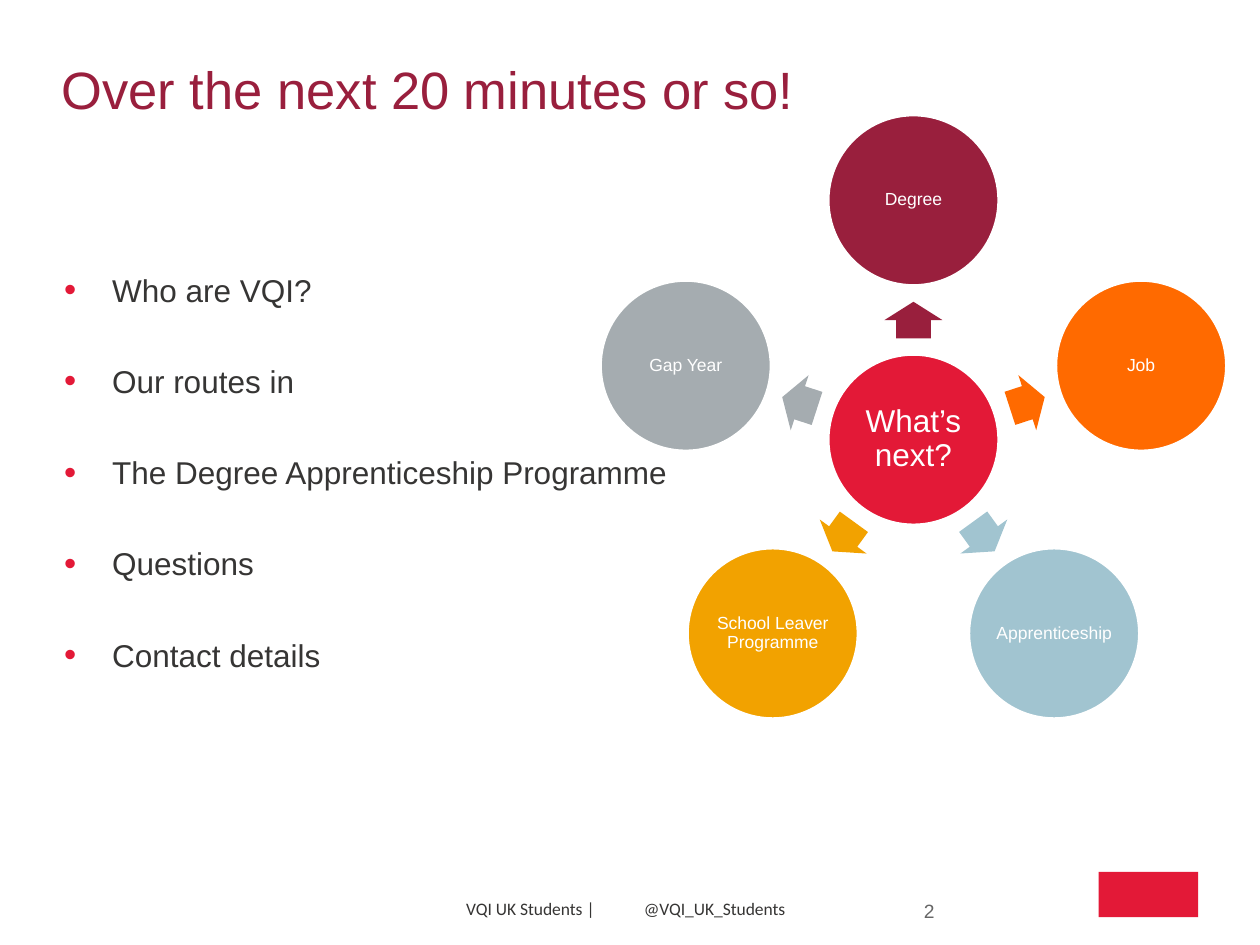
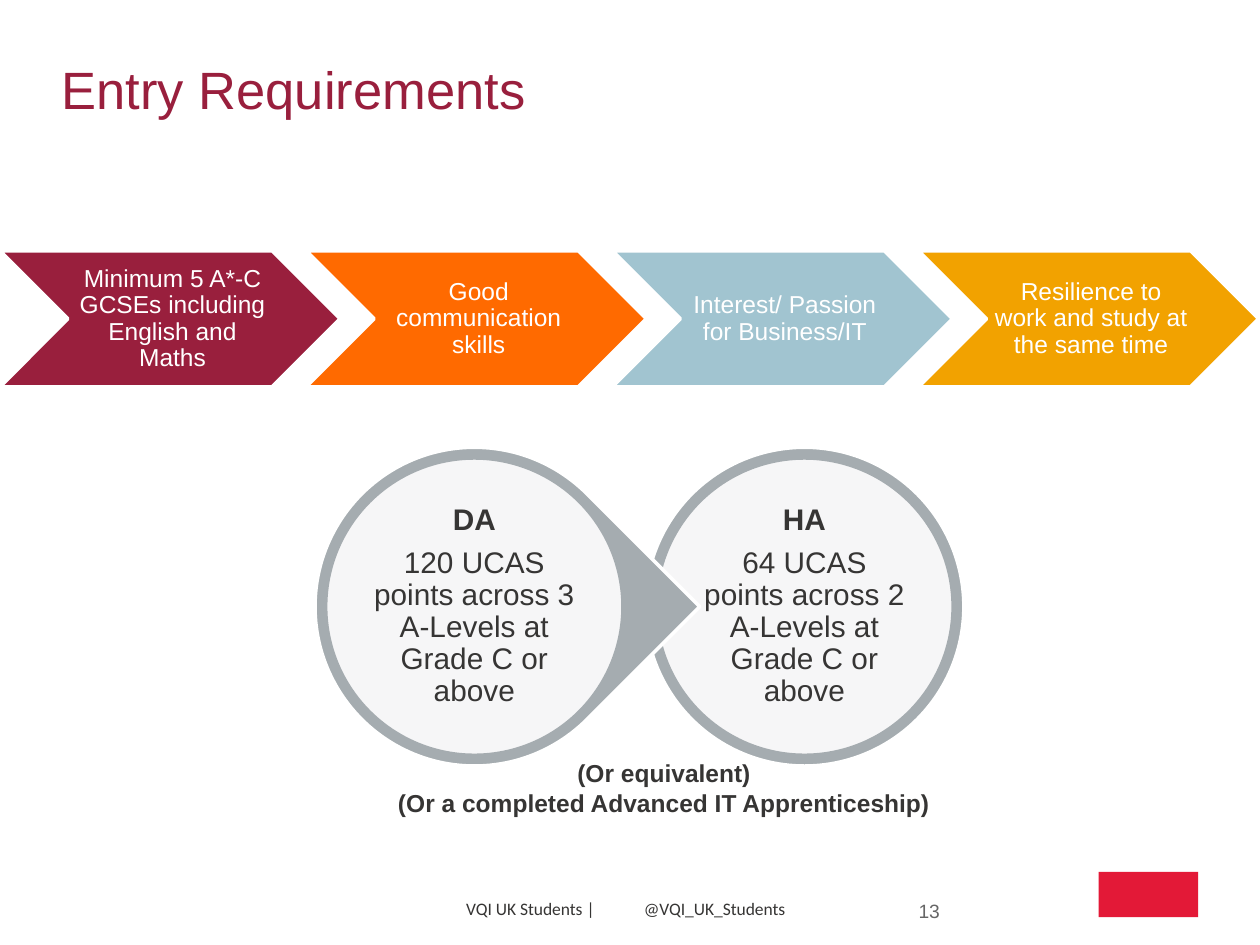
from math import cos, radians, sin

from lxml import etree
from pptx import Presentation
from pptx.dml.color import RGBColor
from pptx.enum.shapes import MSO_SHAPE
from pptx.enum.text import MSO_ANCHOR, PP_ALIGN
from pptx.oxml.ns import qn
from pptx.util import Inches, Pt

MAROON = RGBColor(0x99, 0x1F, 0x3D)
RED = RGBColor(0xE3, 0x19, 0x37)
ORANGE = RGBColor(0xFF, 0x6A, 0x00)
BLUE = RGBColor(0xA1, 0xC4, 0xD0)
AMBER = RGBColor(0xF2, 0xA2, 0x00)
SILVER = RGBColor(0xA5, 0xAC, 0xB0)
DARK = RGBColor(0x36, 0x35, 0x34)
GREY = RGBColor(0x66, 0x66, 0x66)
WHITE = RGBColor(0xFF, 0xFF, 0xFF)

FOOTERS = [("VQI UK Students |", 3.7), ("@VQI_UK_Students", 5.11)]

AGENDA = [
    "Who are VQI?",
    "Our routes in",
    "The Degree Apprenticeship Programme",
    "Questions",
    "Contact details",
]
HUB = "What’s next?"
ROUTES = [
    ("Degree", MAROON),
    ("Job", ORANGE),
    ("Apprenticeship", BLUE),
    ("School Leaver Programme", AMBER),
    ("Gap Year", SILVER),
]
REQUIREMENTS = [
    ("Minimum 5 A*-C GCSEs including English and Maths", MAROON),
    ("Good communication skills", ORANGE),
    ("Interest/ Passion for Business/IT", BLUE),
    ("Resilience to work and study at the same time", AMBER),
]
GRADES = [
    ("HA", "64 UCAS points across 2 A-Levels at Grade C or above", 5.12, MSO_SHAPE.OVAL, 0),
    ("DA", "120 UCAS points across 3 A-Levels at Grade C or above", 2.5, MSO_SHAPE.TEAR, 45),
]
ALTERNATIVES = ["(Or equivalent)", "(Or a completed Advanced IT Apprenticeship)"]


def write_text(shape, lines, size, color, font="Arial", bold_lines=(), align=PP_ALIGN.LEFT,
               anchor=MSO_ANCHOR.TOP, insets=(0, 0, 0, 0), line_spacing=None, gap=0,
               bullet_color=None):
    frame = shape.text_frame
    frame.word_wrap = True
    frame.vertical_anchor = anchor
    frame.margin_left, frame.margin_top, frame.margin_right, frame.margin_bottom = map(Inches, insets)
    for index, line in enumerate(lines):
        paragraph = frame.paragraphs[0] if index == 0 else frame.add_paragraph()
        if bullet_color is not None:
            add_bullet(paragraph, bullet_color)
        paragraph.alignment = align
        if line_spacing:
            paragraph.line_spacing = line_spacing
        if index and gap:
            paragraph.space_before = Pt(gap)
        run = paragraph.add_run()
        run.text = line
        run.font.name = font
        run.font.size = Pt(size)
        run.font.bold = index in bold_lines
        run.font.color.rgb = color


def add_bullet(paragraph, color):
    properties = paragraph._p.get_or_add_pPr()
    properties.set("marL", str(Inches(0.38)))
    properties.set("indent", str(-Inches(0.38)))
    bullet_color = etree.SubElement(properties, qn("a:buClr"))
    etree.SubElement(bullet_color, qn("a:srgbClr"), val=str(color))
    etree.SubElement(properties, qn("a:buSzPct"), val="110000")
    etree.SubElement(properties, qn("a:buFont"), typeface="Arial")
    etree.SubElement(properties, qn("a:buChar"), char="•")


def add_text(slide, lines, left, top, width, height, **text_format):
    box = slide.shapes.add_textbox(Inches(left), Inches(top), Inches(width), Inches(height))
    write_text(box, lines, **text_format)


def add_figure(slide, kind, left, top, width, height, fill, line=None, rotation=0):
    shape = slide.shapes.add_shape(kind, Inches(left), Inches(top), Inches(width), Inches(height))
    shape.shadow.inherit = False
    shape.rotation = rotation
    shape.fill.solid()
    shape.fill.fore_color.rgb = fill
    if line is None:
        shape.line.fill.background()
    else:
        shape.line.color.rgb = line
        shape.line.width = Pt(2)
    return shape


def write_label(shape, lines, size, color=WHITE, **text_format):
    write_text(shape, lines, size, color, align=PP_ALIGN.CENTER, anchor=MSO_ANCHOR.MIDDLE,
               line_spacing=0.9, **text_format)


def add_slide(presentation, title, number):
    slide = presentation.slides.add_slide(presentation.slide_layouts[5])
    heading = slide.shapes.title
    heading.left, heading.top = Inches(0.49), Inches(0.2)
    heading.width, heading.height = Inches(9.01), Inches(1.01)
    write_text(heading, [title], size=30, color=MAROON, anchor=MSO_ANCHOR.MIDDLE)
    add_figure(slide, MSO_SHAPE.RECTANGLE, 8.72, 6.92, 0.79, 0.36, RED)
    for text, left in FOOTERS:
        add_text(slide, [text], left, 7.13, 1.17, 0.17, size=10, color=DARK, font="Calibri")
    add_text(slide, [number], 6.95, 7.14, 0.85, 0.26, size=11, color=GREY, align=PP_ALIGN.CENTER)
    return slide


def add_routes(slide):
    center_x, center_y, diameter = 7.25, 3.49, 1.36
    arrow_length, arrow_width = 0.29, 0.46

    def add_circle(text, x, y, fill, size, inset):
        circle = add_figure(slide, MSO_SHAPE.OVAL, x - diameter / 2, y - diameter / 2,
                            diameter, diameter, fill, WHITE)
        write_label(circle, [text], size, insets=(inset,) * 4)

    add_circle(HUB, center_x, center_y, RED, 18, 0.03)
    for index, (text, color) in enumerate(ROUTES):
        angle = index * 360 / len(ROUTES) - 90
        across, down = cos(radians(angle)), sin(radians(angle))
        arrow = add_figure(slide, MSO_SHAPE.RIGHT_ARROW,
                           center_x + 0.95 * across - arrow_length / 2,
                           center_y + 0.95 * down - arrow_width / 2,
                           arrow_length, arrow_width, color, rotation=angle % 360)
        arrow.adjustments[0], arrow.adjustments[1] = 0.6, 0.5
        add_circle(text, center_x + 1.9 * across, center_y + 1.9 * down, color, 10, 0.01)


def add_requirements(slide):
    for index, (text, color) in enumerate(REQUIREMENTS):
        chevron = add_figure(slide, MSO_SHAPE.CHEVRON, index * 2.43, 1.99, 2.7, 1.08, color, WHITE)
        write_label(chevron, [text], 14, insets=(0.06, 0.02, 0.02, 0.02))


def add_grades(slide):
    top, outer, inner = 3.55, 2.53, 2.36
    margin = (outer - inner) / 2
    for name, grade, left, kind, rotation in GRADES:
        add_figure(slide, kind, left, top, outer, outer, SILVER, WHITE, rotation)
        disc = add_figure(slide, MSO_SHAPE.OVAL, left + margin, top + margin, inner, inner,
                          WHITE, SILVER)
        fill_color = disc.fill._xPr.find(qn("a:solidFill"))[0]
        etree.SubElement(fill_color, qn("a:alpha"), val="90000")
        write_label(disc, [name, grade], 17, DARK, bold_lines=(0,), insets=(0.01,) * 4, gap=6)


def main():
    presentation = Presentation()
    presentation.slide_width, presentation.slide_height = Inches(10), Inches(7.5)

    agenda_slide = add_slide(presentation, "Over the next 20 minutes or so!", "2")
    add_text(agenda_slide, AGENDA, 0.51, 2.15, 9.02, 5.35, size=18, color=DARK,
             gap=30.5, bullet_color=RED)
    add_routes(agenda_slide)

    entry_slide = add_slide(presentation, "Entry Requirements", "13")
    add_requirements(entry_slide)
    add_grades(entry_slide)
    add_text(entry_slide, ALTERNATIVES, 2.65, 6.02, 5.24, 0.47, size=14, color=DARK,
             bold_lines=(0, 1), align=PP_ALIGN.CENTER)

    presentation.save("out.pptx")


if __name__ == "__main__":
    main()
